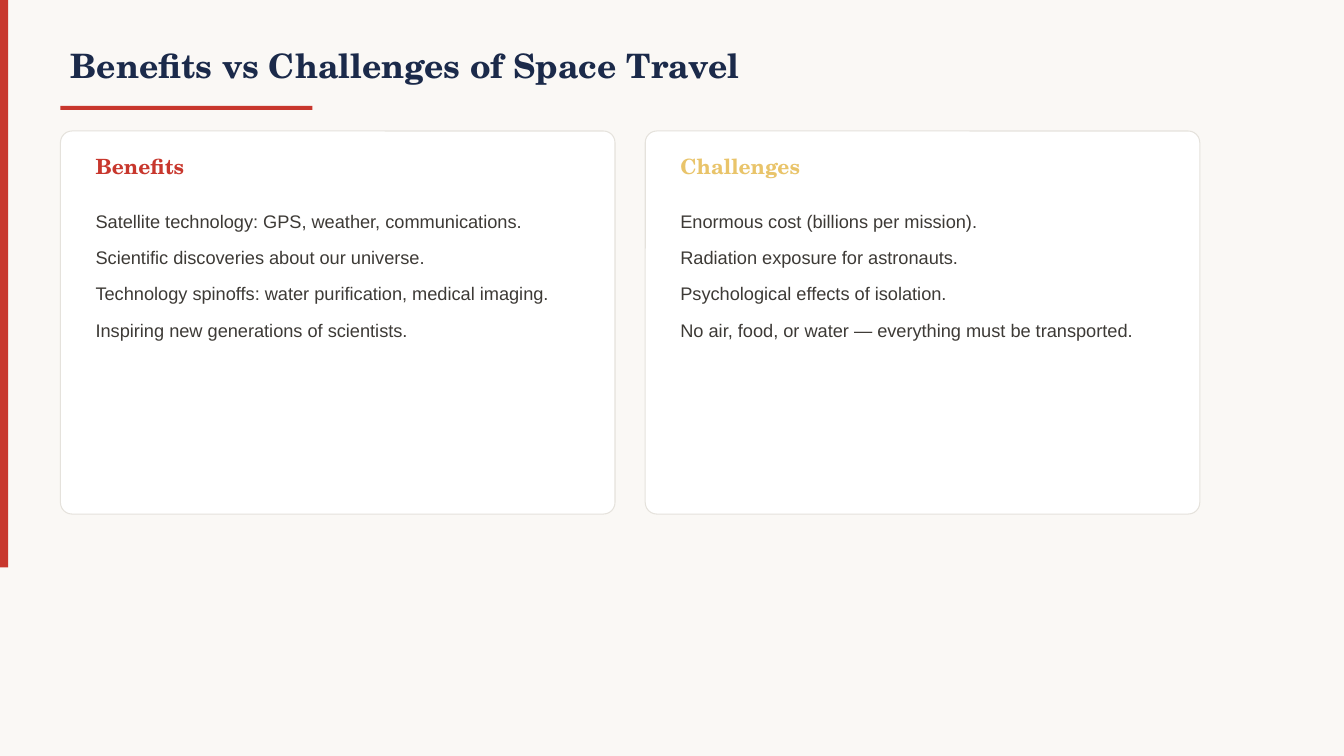
from pptx import Presentation
from pptx.dml.color import RGBColor
from pptx.enum.shapes import MSO_SHAPE
from pptx.enum.text import MSO_ANCHOR, PP_ALIGN
from pptx.util import Inches, Pt

RECT = MSO_SHAPE.RECTANGLE
ROUND = MSO_SHAPE.ROUNDED_RECTANGLE
TOP, MIDDLE = MSO_ANCHOR.TOP, MSO_ANCHOR.MIDDLE
LEFT = PP_ALIGN.LEFT

CREAM = RGBColor(0xFA, 0xF8, 0xF5)
RED = RGBColor(0xC8, 0x37, 0x2D)
NAVY = RGBColor(0x1B, 0x2A, 0x4A)
GOLD = RGBColor(0xE9, 0xC4, 0x6A)
WHITE = RGBColor(0xFF, 0xFF, 0xFF)
BORDER = RGBColor(0xE5, 0xE2, 0xDC)
INK = RGBColor(0x3D, 0x3A, 0x36)
SERIF, SANS = "TeX Gyre Schola", "Arial"

deck = Presentation()
deck.slide_width = Inches(13.33)
deck.slide_height = Inches(7.5)
slide = deck.slides.add_slide(deck.slide_layouts[5])
slide.background.fill.solid()
slide.background.fill.fore_color.rgb = CREAM


def add_block(kind, x, y, w, h, fill, line=None):
    block = slide.shapes.add_shape(kind, Inches(x), Inches(y), Inches(w), Inches(h))
    block.shadow.inherit = False
    block.fill.solid()
    block.fill.fore_color.rgb = fill
    if line is None:
        block.line.fill.background()
    else:
        block.line.color.rgb = line
        block.line.width = Pt(0.75)
    return block


def put_text(text, x, y, w, h, box=None, size=13, color=INK, font=SERIF,
             bold=True, anchor=MIDDLE, spacing=1.0, after=0):
    """Write one paragraph per line of text into box, or into a new text box."""
    if box is None:
        box = slide.shapes.add_textbox(0, 0, 0, 0)
    box.left, box.top, box.width, box.height = map(Inches, (x, y, w, h))
    frame = box.text_frame
    frame.word_wrap = True
    frame.vertical_anchor = anchor
    frame.text = text
    for para in frame.paragraphs:
        para.alignment = LEFT
        para.line_spacing = spacing
        para.space_before = Pt(0)
        para.space_after = Pt(after)
        for run in para.runs:
            run.font.size = Pt(size)
            run.font.name = font
            run.font.bold = bold
            run.font.color.rgb = color


add_block(RECT, 0, 0, 0.08, 5.63, RED)
put_text("Benefits vs Challenges of Space Travel", 0.6, 0.3, 10, 0.7,
         box=slide.shapes.title, size=24, color=NAVY)
add_block(RECT, 0.6, 1.05, 2.5, 0.04, RED)

cards = [
    ("Benefits", RED, [
        "Satellite technology: GPS, weather, communications.",
        "Scientific discoveries about our universe.",
        "Technology spinoffs: water purification, medical imaging.",
        "Inspiring new generations of scientists.",
    ]),
    ("Challenges", GOLD, [
        "Enormous cost (billions per mission).",
        "Radiation exposure for astronauts.",
        "Psychological effects of isolation.",
        "No air, food, or water — everything must be transported.",
    ]),
]
for col, (head, color, points) in enumerate(cards):
    x = 0.6 + col * 5.8
    card = add_block(ROUND, x, 1.3, 5.5, 3.8, WHITE, line=BORDER)
    card.adjustments[0] = 0.03
    put_text(head, x + 0.25, 1.45, 5, 0.4, size=15, color=color)
    put_text("\n".join(points), x + 0.25, 1.95, 5, 2.9, font=SANS, bold=False,
             anchor=TOP, spacing=1.4, after=4)

deck.save("out.pptx")
